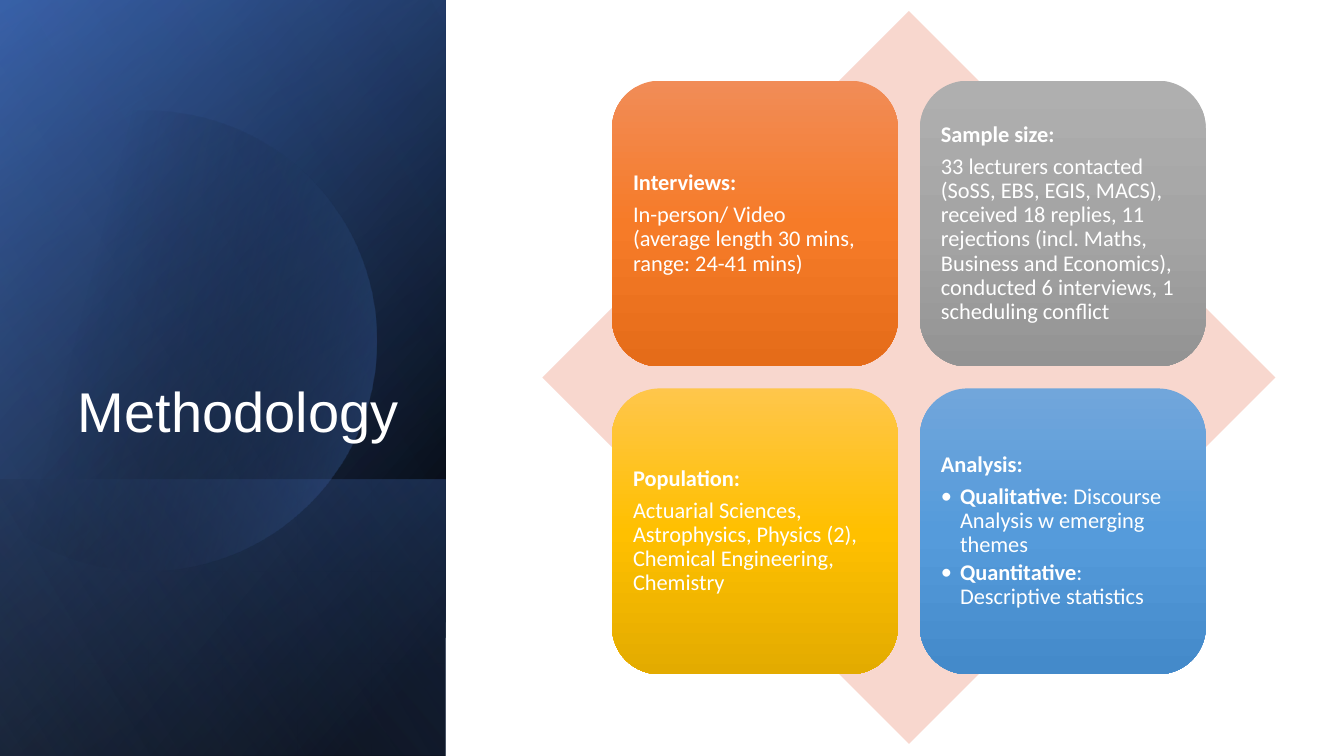
import math

from lxml import etree
from pptx import Presentation
from pptx import util as u
from pptx.dml.color import RGBColor
from pptx.enum import shapes, text
from pptx.oxml.ns import qn

WIDTH, HEIGHT = 13.33, 7.5
PANEL_WIDTH = 4.42
MATRIX_LEFT, MATRIX_TOP, MATRIX_SIZE = 5.38, 0.11, 7.27
CARD_SIZE, CARD_MARGIN, CARD_PITCH = (
    share * MATRIX_SIZE for share in (0.39, 0.095, 0.42))

COLORS = {
    "white": "FFFFFF", "black": "000000", "navy": "2F5597", "blue": "4472C4",
    "pale_blue": "8FAADC", "blush": "F8D7CE",
}

# Top of the panel, gradient angle, stops as (position, colour, opacity)
BASE_PANELS = [
    (0, 50, [(8, "black", 100), (100, "navy", 100)]),
    (0, 30, [(0, "black", 0), (99, "blue", 46)]),
    (4.76, 130, [(2, "blue", 29), (100, "black", 30)]),
]
TOP_PANEL = (0, 120, [(0, "black", 0), (99, "pale_blue", 11)])

# Gradient, heading, body as (bold lead, plain text), bulleted
CARDS = [
    (("F18C57", "F67B28", "E56C19"), "Interviews:",
     [("", "In-person/ Video\n(average length 30 mins, range: 24-41 mins)")], False),
    (("AFAFAF", "A5A5A5", "939393"), "Sample size:",
     [("", "33 lecturers contacted (SoSS, EBS, EGIS, MACS), received 18 replies, "
           "11 rejections (incl. Maths, Business and Economics), "
           "conducted 6 interviews, 1 scheduling conflict")], False),
    (("FFC64B", "FFC000", "E3AB00"), "Population:",
     [("", "Actuarial Sciences, Astrophysics, Physics (2), "
           "Chemical Engineering, Chemistry")], False),
    (("71A6DB", "559BDB", "448ACA"), "Analysis:",
     [("Qualitative", ": Discourse Analysis w emerging themes"),
      ("Quantitative", ": Descriptive statistics")], True),
]


def rgb(name):
    return RGBColor.from_string(COLORS[name])


def fill_gradient(shape, angle, stops):
    """Fill with stops of (position %, hex colour, opacity %)."""
    shape.shadow.inherit = False
    shape.line.fill.background()
    shape.fill.gradient()
    gradient = shape._element.spPr.find(qn("a:gradFill"))
    gradient.clear()
    gradient.set("rotWithShape", "1")
    stop_list = etree.SubElement(gradient, qn("a:gsLst"))
    for position, color, opacity in stops:
        stop = etree.SubElement(stop_list, qn("a:gs"), pos=str(position * 1000))
        tint = etree.SubElement(stop, qn("a:srgbClr"), val=color)
        if opacity < 100:
            etree.SubElement(tint, qn("a:alpha"), val=str(opacity * 1000))
    etree.SubElement(gradient, qn("a:lin"), ang=str(angle * 60000), scaled="0")


def named_stops(stops):
    return [(position, COLORS[name], opacity) for position, name, opacity in stops]


def add_panel(slide, top, angle, stops):
    """Add a quarter-turned, flipped rectangle from top to the slide's bottom."""
    length = HEIGHT - top
    panel = slide.shapes.add_shape(
        shapes.MSO_SHAPE.RECTANGLE,
        u.Inches((PANEL_WIDTH - length) / 2),
        u.Inches(top + (length - PANEL_WIDTH) / 2),
        u.Inches(length), u.Inches(PANEL_WIDTH))
    panel.rotation = 90
    panel._element.spPr.find(qn("a:xfrm")).set("flipH", "1")
    fill_gradient(panel, angle, named_stops(stops))


def add_disc(slide, center_x, center_y, radius):
    """Add a circle cut off by a vertical chord on its left."""
    points = [(u.Inches(center_x + radius * math.cos(math.radians(degree))),
               u.Inches(center_y + radius * math.sin(math.radians(degree))))
              for degree in range(-135, 136, 3)]
    builder = slide.shapes.build_freeform(*points[0])
    builder.add_line_segments(points[1:], close=True)
    disc = builder.convert_to_shape()
    fill_gradient(disc, 14, named_stops([(29, "black", 0), (100, "blue", 43)]))


def place_title(slide, wording):
    title = slide.shapes.title
    title.left, title.top = u.Inches(0.64), u.Inches(1.84)
    title.width, title.height = u.Inches(3.41), u.Inches(2.62)
    frame = title.text_frame
    frame.text = wording
    frame.word_wrap = True
    frame.auto_size = text.MSO_AUTO_SIZE.NONE
    frame.vertical_anchor = text.MSO_ANCHOR.BOTTOM
    paragraph = frame.paragraphs[0]
    paragraph.alignment = text.PP_ALIGN.RIGHT
    paragraph.line_spacing = 0.9
    paragraph.font.name = "Arial"
    paragraph.font.size = u.Pt(40)
    paragraph.font.color.rgb = rgb("white")
    slide.shapes._spTree.append(title._element)


def add_diamond(slide):
    diamond = slide.shapes.add_shape(
        shapes.MSO_SHAPE.DIAMOND, u.Inches(MATRIX_LEFT), u.Inches(MATRIX_TOP),
        u.Inches(MATRIX_SIZE), u.Inches(MATRIX_SIZE))
    diamond.shadow.inherit = False
    diamond.line.fill.background()
    diamond.fill.solid()
    diamond.fill.fore_color.rgb = rgb("blush")


def write_paragraph(paragraph, lead, plain, space_after):
    paragraph.alignment = text.PP_ALIGN.LEFT
    paragraph.line_spacing = 0.9
    paragraph.space_after = u.Pt(space_after)
    paragraph.font.name = "Calibri"
    paragraph.font.size = u.Pt(16)
    paragraph.font.color.rgb = rgb("white")
    if lead:
        run = paragraph.add_run()
        run.text = lead
        run.font.bold = True
    for number, line in enumerate(plain.splitlines()):
        if number:
            paragraph.add_line_break()
        paragraph.add_run().text = line


def add_bullet(paragraph):
    properties = paragraph._p.get_or_add_pPr()
    indent = u.Inches(0.19)
    properties.set("marL", str(indent))
    properties.set("indent", str(-indent))
    defaults = properties.find(qn("a:defRPr"))
    defaults.addprevious(etree.Element(qn("a:buFont"), typeface="Calibri"))
    defaults.addprevious(etree.Element(qn("a:buChar"), char="•"))


def add_card(slide, column, row, gradient, heading, body, bulleted):
    card = slide.shapes.add_shape(
        shapes.MSO_SHAPE.ROUNDED_RECTANGLE,
        u.Inches(MATRIX_LEFT + CARD_MARGIN + column * CARD_PITCH),
        u.Inches(MATRIX_TOP + CARD_MARGIN + row * CARD_PITCH),
        u.Inches(CARD_SIZE), u.Inches(CARD_SIZE))
    fill_gradient(card, 90, [(position, color, 100)
                             for position, color in zip((0, 50, 100), gradient)])
    frame = card.text_frame
    frame.word_wrap = True
    frame.vertical_anchor = text.MSO_ANCHOR.MIDDLE
    frame.margin_left = frame.margin_right = u.Inches(0.07)
    frame.margin_top = frame.margin_bottom = u.Inches(0.07)
    write_paragraph(frame.paragraphs[0], heading, "", 5.6)
    for lead, plain in body:
        paragraph = frame.add_paragraph()
        write_paragraph(paragraph, lead, plain, 2.4 if bulleted else 5.6)
        if bulleted:
            add_bullet(paragraph)


def main():
    presentation = Presentation()
    presentation.slide_width = u.Inches(WIDTH)
    presentation.slide_height = u.Inches(HEIGHT)
    slide = presentation.slides.add_slide(
        presentation.slide_layouts.get_by_name("Title Only"))
    for panel in BASE_PANELS:
        add_panel(slide, *panel)
    add_disc(slide, center_x=1.45, center_y=3.38, radius=2.28)
    add_panel(slide, *TOP_PANEL)
    place_title(slide, "Methodology")
    add_diamond(slide)
    for number, card in enumerate(CARDS):
        row, column = divmod(number, 2)
        add_card(slide, column, row, *card)
    presentation.save("out.pptx")


if __name__ == "__main__":
    main()
